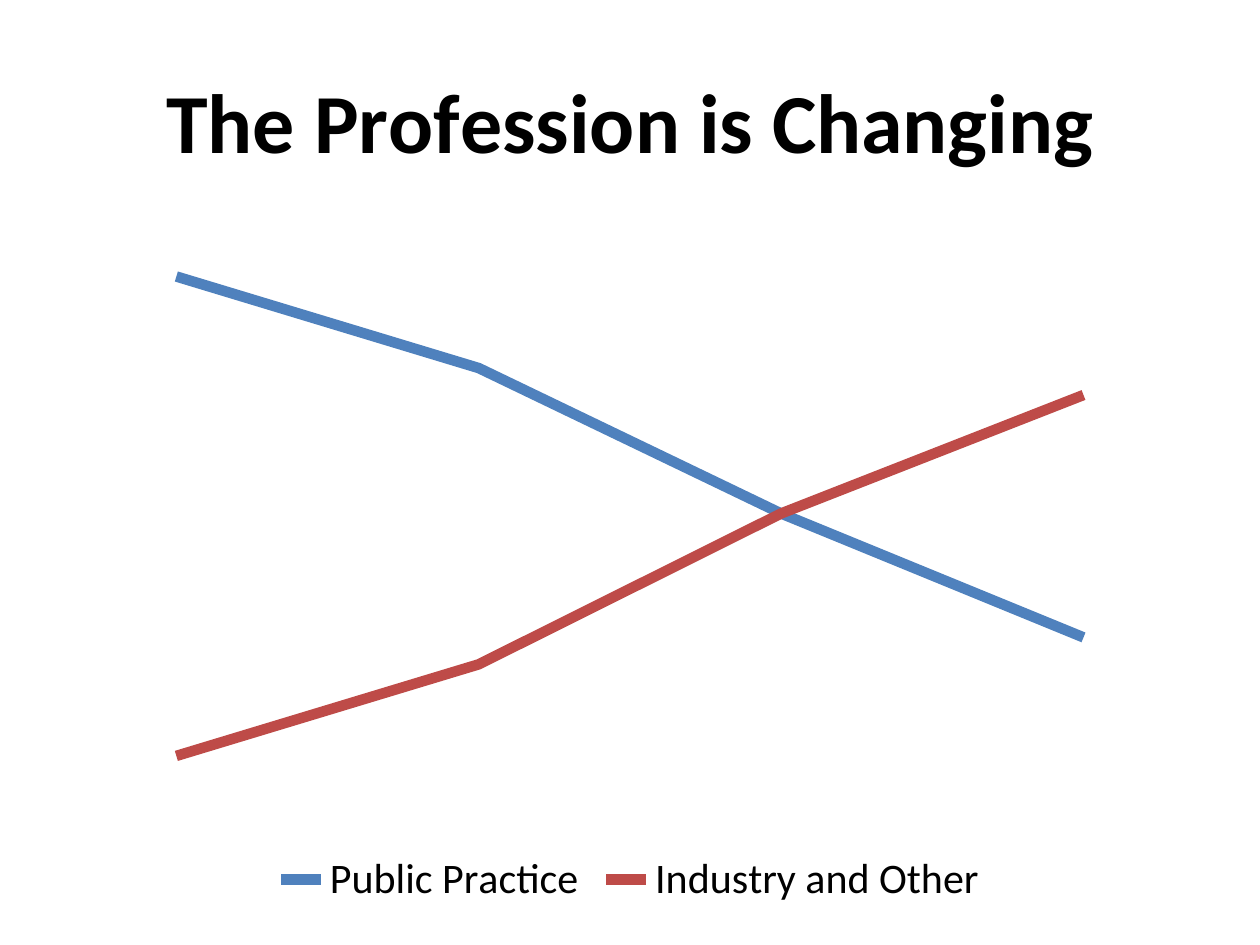
from lxml import etree
from pptx import Presentation
from pptx.chart.data import CategoryChartData
from pptx.dml.color import RGBColor
from pptx.enum.chart import XL_CHART_TYPE, XL_LEGEND_POSITION, XL_MARKER_STYLE
from pptx.oxml.ns import qn
from pptx.util import Pt

LINE_CHART = XL_CHART_TYPE.LINE
BOTTOM = XL_LEGEND_POSITION.BOTTOM
NO_MARKER = XL_MARKER_STYLE.NONE

BLACK = RGBColor(0x00, 0x00, 0x00)
BLUE = RGBColor(0x4F, 0x81, 0xBD)
RED = RGBColor(0xBE, 0x4B, 0x48)
FONT = "Calibri"

# Content
TITLE = "The Profession is Changing"
CATEGORIES = ["1", "2", "3", "4"]
SERIES = [
    ("Public Practice", (100, 83, 56, 33), BLUE),
    ("Industry and Other", (11, 28, 56, 78), RED),
]

# Places as fractions of the chart
TITLE_PLACE = {"xMode": "edge", "yMode": "edge", "x": 0.12, "y": 0.03}
PLOT_PLACE = {"layoutTarget": "inner", "xMode": "edge", "yMode": "edge",
              "x": 0.02, "y": 0.22, "w": 0.96, "h": 0.67}


def style_font(font, size, bold=False):
    font.name = FONT
    font.size = Pt(size)
    font.bold = bold
    font.color.rgb = BLACK


def child_after(parent, tag, previous=None):
    """Return the child with this tag, adding it after previous if missing."""
    child = parent.find(qn(tag))
    if child is None:
        child = etree.Element(qn(tag))
        if previous is None:
            parent.insert(0, child)
        else:
            previous.addnext(child)
    return child


def set_layout(layout, place):
    manual = etree.SubElement(layout, qn("c:manualLayout"))
    for name, value in place.items():
        etree.SubElement(manual, qn(f"c:{name}")).set("val", str(value))


deck = Presentation()
deck.slide_width, deck.slide_height = Pt(720), Pt(540)
page = deck.slides.add_slide(deck.slide_layouts[6])

# Line chart
data = CategoryChartData()
data.categories = CATEGORIES
for name, values, _ in SERIES:
    data.add_series(name, values)
chart = page.shapes.add_chart(
    LINE_CHART, Pt(0), Pt(12), Pt(720), Pt(510), data).chart
style_font(chart.font, 18)

for series, (_, _, color) in zip(chart.plots[0].series, SERIES):
    series.smooth = False
    series.marker.style = NO_MARKER
    series.format.line.color.rgb = color
    series.format.line.width = Pt(6)

# Hidden axes
for axis in (chart.category_axis, chart.value_axis):
    axis.has_major_gridlines = False
    axis.visible = False
chart.value_axis.minimum_scale = 0
chart.value_axis.maximum_scale = 111

# Title over the plot
chart.has_title = True
title = chart.chart_title
span = title.text_frame.paragraphs[0].add_run()
span.text = TITLE
style_font(span.font, 48, bold=True)
title_xml = title._element
title_layout = child_after(title_xml, "c:layout", title_xml.find(qn("c:tx")))
set_layout(title_layout, TITLE_PLACE)
child_after(title_xml, "c:overlay", title_layout).set("val", "1")

# Plot area
plot_xml = chart.plots[0]._element.getparent()
set_layout(child_after(plot_xml, "c:layout"), PLOT_PLACE)

# Legend
chart.has_legend = True
chart.legend.position = BOTTOM
chart.legend.include_in_layout = False
style_font(chart.legend.font, 24)

deck.save("out.pptx")
